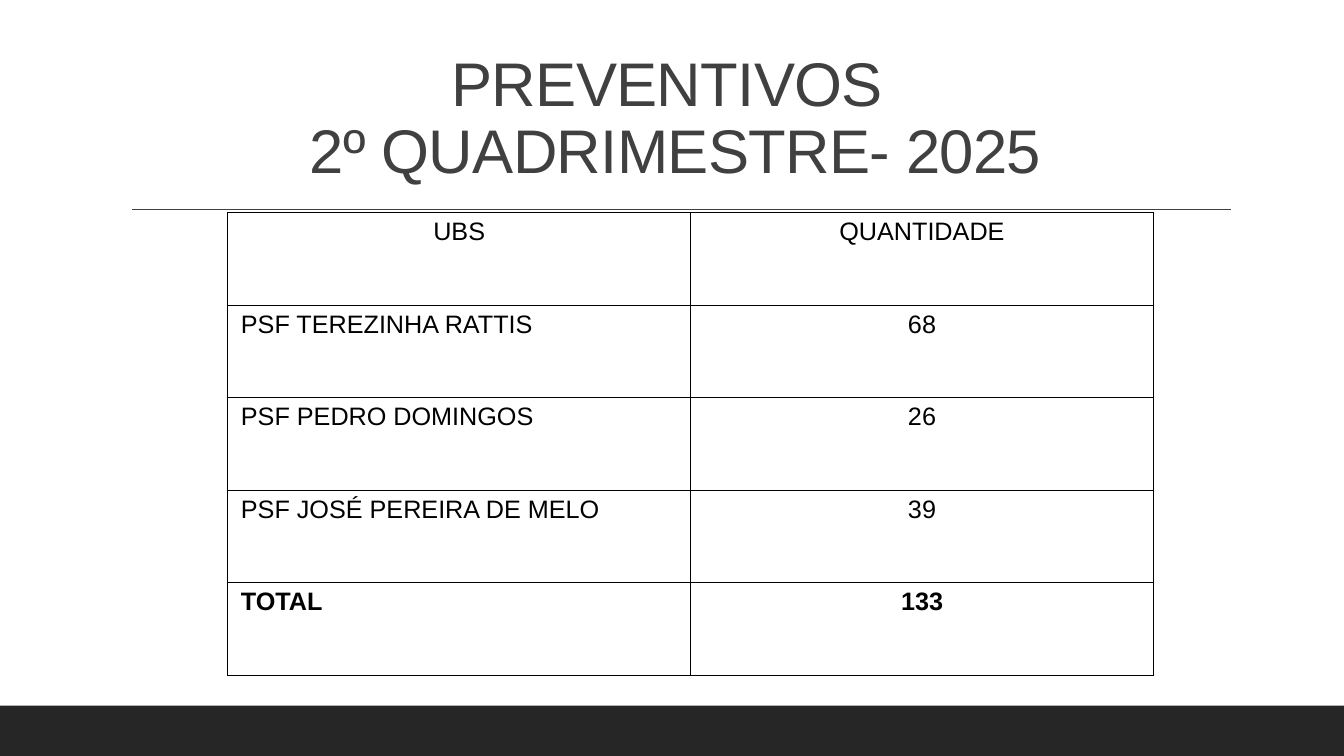
from lxml import etree
from pptx import Presentation
from pptx.dml.color import RGBColor
from pptx.enum import shapes, text
from pptx.oxml.ns import qn
from pptx.util import Inches, Pt

FONT = "Arial"
ROWS = [
    ("UBS", "QUANTIDADE"),
    ("PSF TEREZINHA RATTIS", "68"),
    ("PSF PEDRO DOMINGOS", "26"),
    ("PSF JOSÉ PEREIRA DE MELO", "39"),
    ("TOTAL", "133"),
]


def color(value):
    return RGBColor.from_string(value)


def style_font(font, size, value, bold=False):
    font.name = FONT
    font.size = Pt(size)
    font.bold = bold
    font.color.rgb = color(value)


def set_margins(target, side, end):
    target.margin_left = target.margin_right = Inches(side)
    target.margin_top = target.margin_bottom = Inches(end)


def add_footer_band(page, left, top, width, height):
    band = page.shapes.add_shape(
        shapes.MSO_SHAPE.RECTANGLE,
        Inches(left), Inches(top), Inches(width), Inches(height))
    band.shadow.inherit = False
    band.fill.solid()
    band.fill.fore_color.rgb = color("262626")
    band.line.fill.background()


def add_title_rule(page, left, top, width):
    rule = page.shapes.add_connector(
        shapes.MSO_CONNECTOR.STRAIGHT,
        Inches(left), Inches(top), Inches(left + width), Inches(top))
    rule.line.color.rgb = color("404040")
    rule.line.width = Pt(1)
    etree.SubElement(rule._element.spPr, qn("a:effectLst"))


def add_title(page, left, top, width, height):
    box = page.shapes.add_textbox(
        Inches(left), Inches(top), Inches(width), Inches(height))
    frame = box.text_frame
    frame.word_wrap = True
    frame.vertical_anchor = text.MSO_ANCHOR.BOTTOM
    set_margins(frame, 0.1, 0.05)
    para = frame.paragraphs[0]
    para.text = "PREVENTIVOS \v2º QUADRIMESTRE- 2025"
    para.alignment = text.PP_ALIGN.CENTER
    para.line_spacing = 0.9
    style_font(para.font, 44, "404040")
    for span in para.runs:
        span.font._element.set("spc", "-50")
    # The break takes its line height from its own size
    for line_break in para._p.findall(qn("a:br")):
        etree.SubElement(line_break, qn("a:rPr"), sz="4400")


def add_borders(cell):
    properties = cell._tc.get_or_add_tcPr()
    for index, side in enumerate(("lnL", "lnR", "lnT", "lnB")):
        line = etree.Element(qn(f"a:{side}"), w=str(Pt(1)))
        fill = etree.SubElement(line, qn("a:solidFill"))
        etree.SubElement(fill, qn("a:srgbClr"), val="000000")
        properties.insert(index, line)


def add_quantity_table(page, left, top, width, height):
    table = page.shapes.add_table(
        len(ROWS), len(ROWS[0]),
        Inches(left), Inches(top), Inches(width), Inches(height)).table
    table.first_row = table.horz_banding = False
    for row, values in enumerate(ROWS):
        for column, value in enumerate(values):
            cell = table.cell(row, column)
            set_margins(cell, 0.13, 0.05)
            cell.fill.background()
            add_borders(cell)
            para = cell.text_frame.paragraphs[0]
            para.text = value
            centred = row == 0 or column == 1
            para.alignment = (text.PP_ALIGN.CENTER if centred
                              else text.PP_ALIGN.LEFT)
            style_font(para.font, 18, "000000", bold=row == len(ROWS) - 1)


def main():
    deck = Presentation()
    deck.slide_width = Inches(13.33)
    deck.slide_height = Inches(7.5)
    page = deck.slides.add_slide(deck.slide_layouts[6])
    add_footer_band(page, 0, 7, 13.33, 0.5)
    add_title_rule(page, 1.31, 2.08, 10.9)
    add_title(page, 1.2, 0.31, 11, 1.59)
    add_quantity_table(page, 2.26, 2.11, 9.18, 4.59)
    deck.save("out.pptx")


if __name__ == "__main__":
    main()
